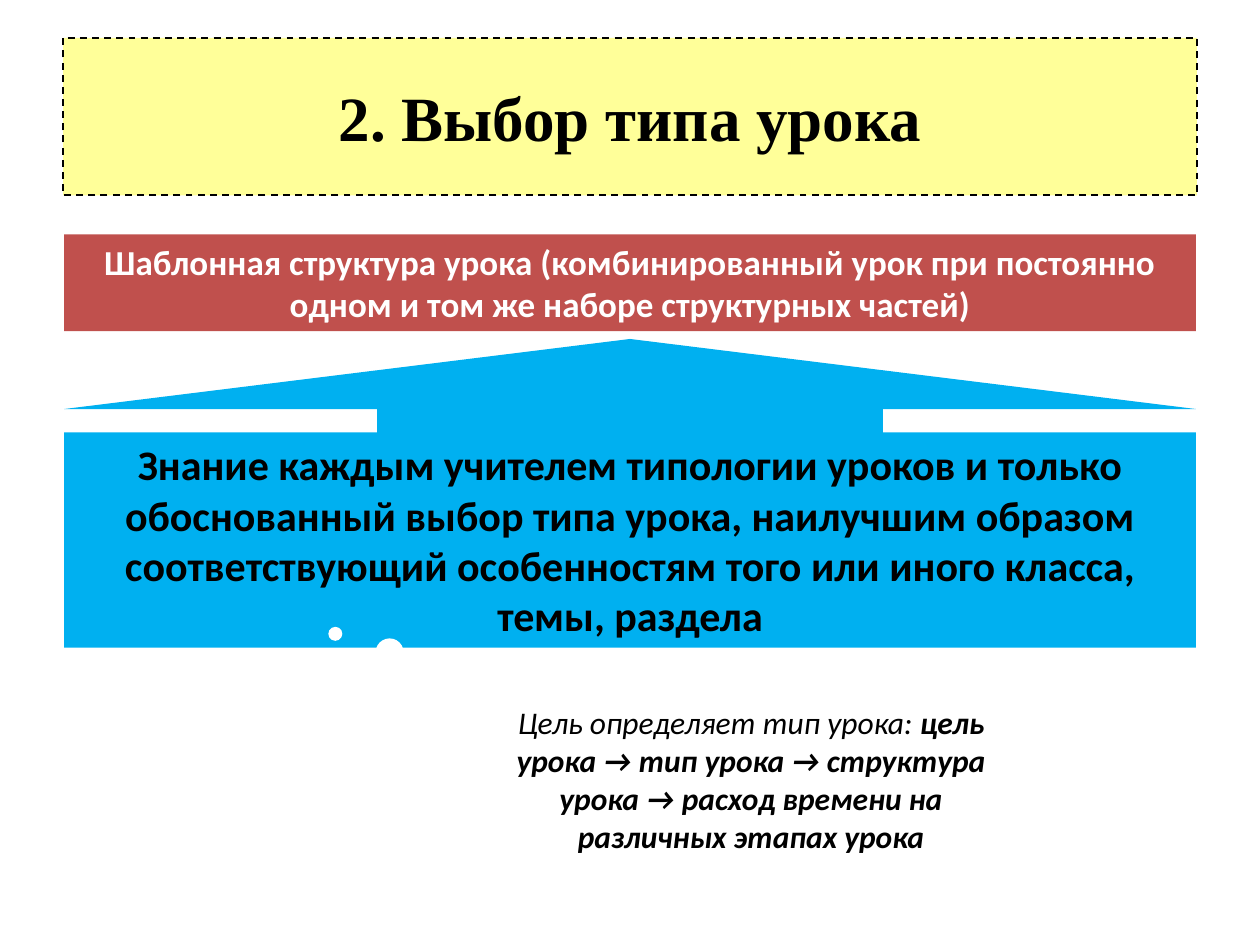
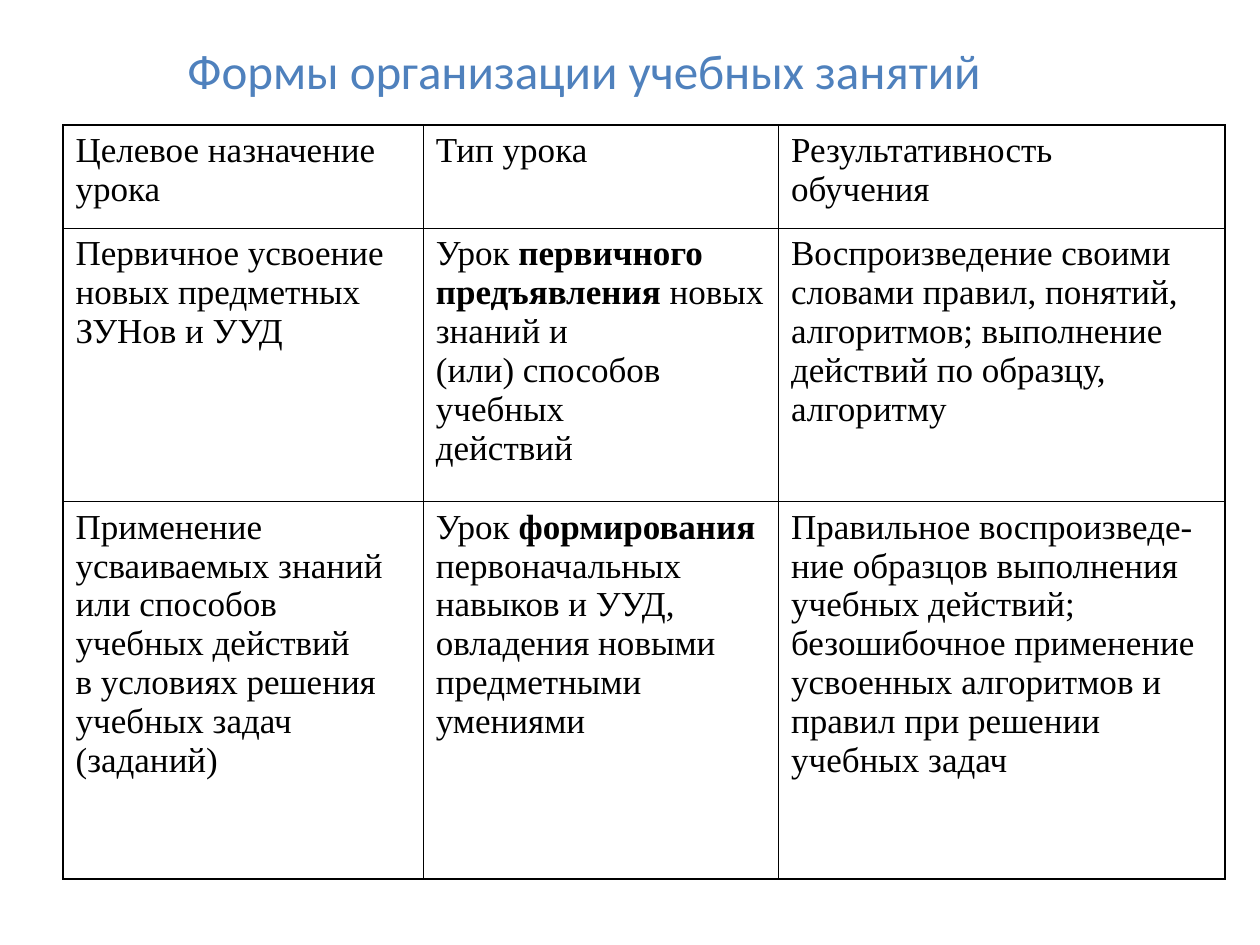
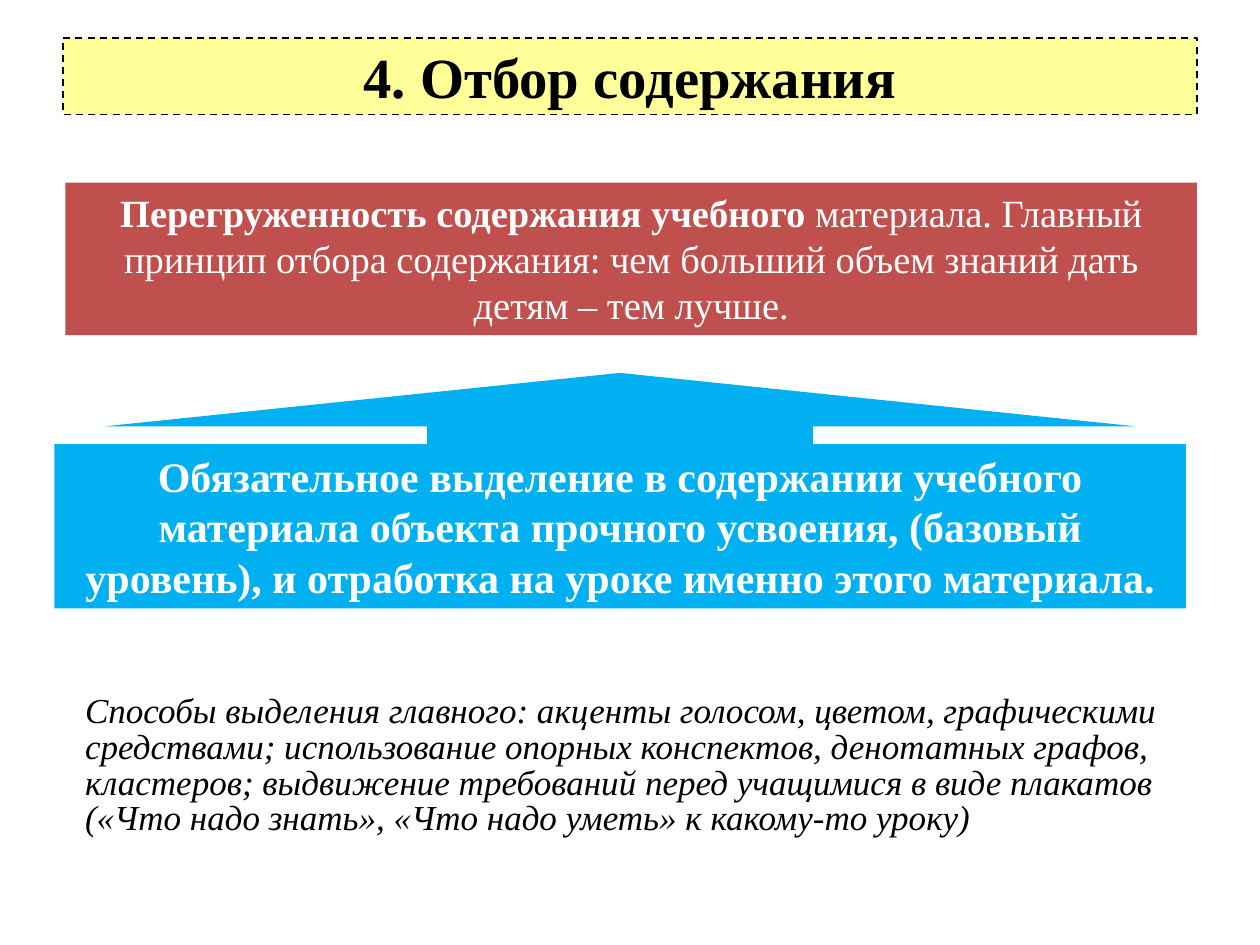
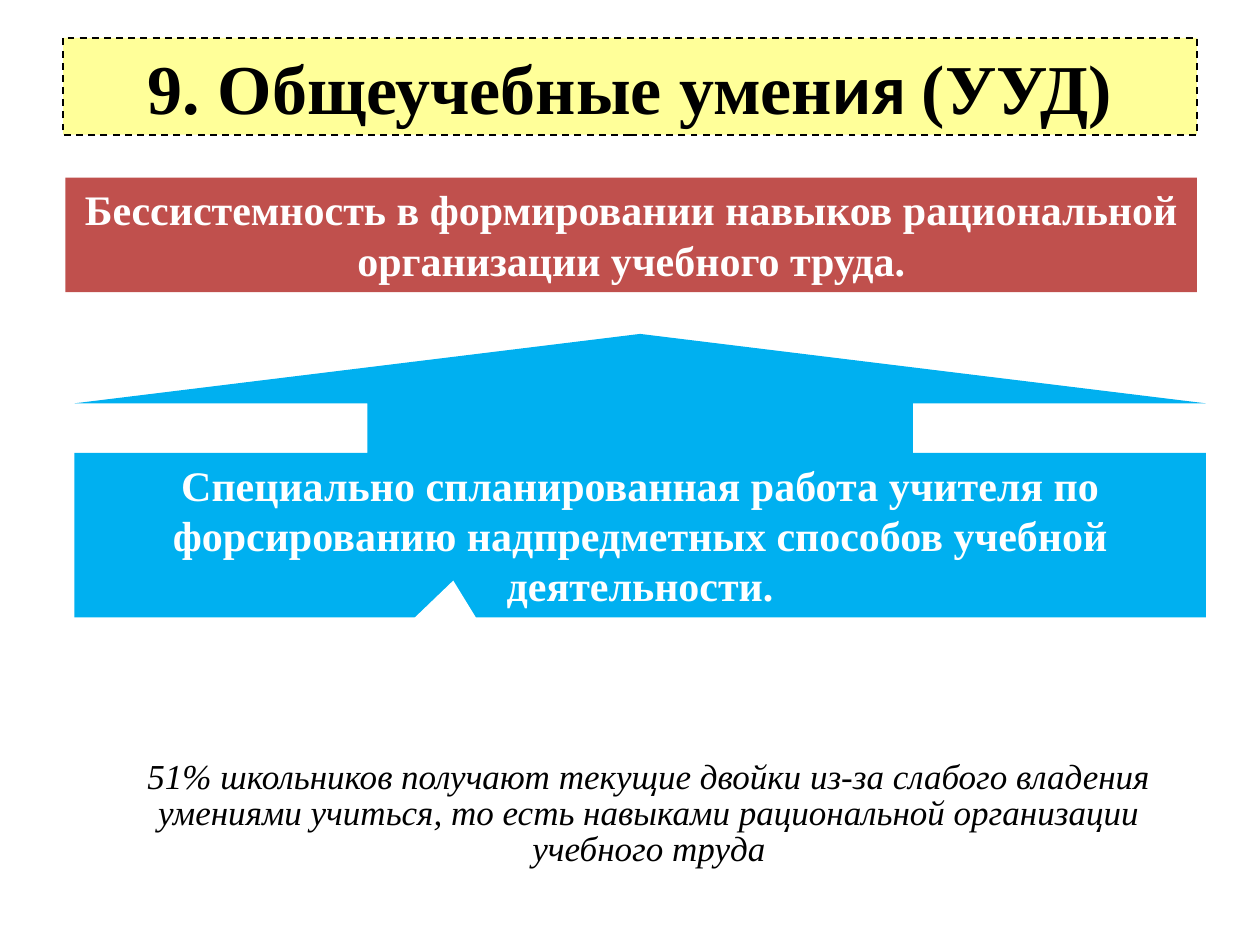
"""Build four lesson-planning slides: three problem/remedy slides and one table."""
from dataclasses import dataclass

from lxml import etree
from pptx import Presentation
from pptx.dml.color import RGBColor
from pptx.enum.dml import MSO_LINE
from pptx.enum.shapes import MSO_SHAPE
from pptx.enum.text import MSO_ANCHOR, MSO_AUTO_SIZE, PP_ALIGN
from pptx.oxml.ns import qn
from pptx.util import Pt

LEFT, CENTER = PP_ALIGN.LEFT, PP_ALIGN.CENTER
TOP, MIDDLE = MSO_ANCHOR.TOP, MSO_ANCHOR.MIDDLE
RECT, ARROW = MSO_SHAPE.RECTANGLE, MSO_SHAPE.UP_ARROW_CALLOUT
CLOUD, WEDGE = MSO_SHAPE.CLOUD_CALLOUT, MSO_SHAPE.ROUNDED_RECTANGULAR_CALLOUT
DASH, FIXED = MSO_LINE.DASH, MSO_AUTO_SIZE.NONE
TITLE_ONLY = 5


@dataclass(frozen=True)
class Theme:
    """Colours, fonts and type sizes shared by the slides."""
    black: str = "000000"
    white: str = "FFFFFF"
    title_fill: str = "FFFF99"
    problem: str = "C0504D"
    remedy: str = "00B0F0"
    accent: str = "4F81BD"
    serif: str = "Times New Roman"
    sans: str = "Calibri"
    title: float = 36
    table_title: float = 28
    large: float = 24
    body: float = 20
    note: float = 18


T = Theme()


def write(tf, paragraphs, *, size, font=T.serif, color=T.black, bold=False,
          italic=False, align=LEFT, anchor=TOP, spacing=None):
    """Fill a text frame; a run is a string or a (string, overrides) pair."""
    tf.word_wrap = True
    tf.vertical_anchor = anchor
    base = dict(size=size, font=font, color=color, bold=bold, italic=italic)
    for i, runs in enumerate(paragraphs):
        p = tf.paragraphs[0] if i == 0 else tf.add_paragraph()
        p.alignment = align
        if spacing:
            p.line_spacing = spacing
        for run in [runs] if isinstance(runs, str) else runs:
            text, changes = (run, {}) if isinstance(run, str) else run
            look = base | changes
            r = p.add_run()
            r.text = text
            r.font.name = look["font"]
            r.font.size = Pt(look["size"])
            r.font.bold = look["bold"]
            r.font.italic = look["italic"]
            r.font.color.rgb = RGBColor.from_string(look["color"])


def paint(sp, fill):
    """Give a shape a solid fill."""
    sp.fill.solid()
    sp.fill.fore_color.rgb = RGBColor.from_string(fill)


def add_title(s, box, runs, **look):
    """Place the title placeholder in its box and write it."""
    sp = s.shapes.title
    sp.left, sp.top, sp.width, sp.height = map(Pt, box)
    write(sp.text_frame, [runs], anchor=MIDDLE, **look)
    sp.text_frame.auto_size = FIXED
    return sp


def add_banner(s, height, runs, size):
    """Add the yellow dashed title banner."""
    sp = add_title(s, (36, 21.6, 648, height), runs, size=size, bold=True, align=CENTER)
    paint(sp, T.title_fill)
    sp.line.color.rgb = RGBColor.from_string(T.black)
    sp.line.width = Pt(1)
    sp.line.dash_style = DASH


def add_block(s, kind, box, fill, runs, adjustments=(), **look):
    """Add a borderless filled shape with text."""
    sp = s.shapes.add_shape(kind, *map(Pt, box))
    sp.shadow.inherit = False
    for i, value in enumerate(adjustments):
        sp.adjustments[i] = value
    paint(sp, fill)
    sp.line.fill.background()
    write(sp.text_frame, [runs], **({"align": CENTER} | look))


def problem_slide(prs, *, banner, remedy, problem, note):
    """Build a slide with a banner, a remedy arrow, a problem and a note."""
    s = prs.slides.add_slide(prs.slide_layouts[TITLE_ONLY])
    add_banner(s, **banner)
    add_block(s, ARROW, fill=T.remedy, size=T.large, bold=True, **remedy)
    add_block(s, RECT, fill=T.problem, color=T.white, bold=True, **problem)
    add_block(s, fill=T.white, italic=True, **note)


def set_borders(cell):
    """Draw a thin black line on all four sides of a cell."""
    tc_pr = cell._tc.get_or_add_tcPr()
    for i, side in enumerate(("a:lnL", "a:lnR", "a:lnT", "a:lnB")):
        ln = etree.Element(qn(side), w=str(Pt(1)))
        fill = etree.SubElement(ln, qn("a:solidFill"))
        etree.SubElement(fill, qn("a:srgbClr"), val=T.black)
        tc_pr.insert(i, ln)


def add_grid(s, box, widths, heights, rows):
    """Add a plain bordered table."""
    table = s.shapes.add_table(len(rows), len(widths), *map(Pt, box)).table
    table.first_row = table.horz_banding = False
    for column, width in zip(table.columns, widths):
        column.width = Pt(width)
    for row, height, texts in zip(table.rows, heights, rows):
        row.height = Pt(height)
        for cell, paragraphs in zip(row.cells, texts):
            cell.fill.background()
            set_borders(cell)
            write(cell.text_frame, paragraphs, size=T.body)


def table_slide(prs, title, rows):
    """Build the slide with a plain title and a table."""
    s = prs.slides.add_slide(prs.slide_layouts[TITLE_ONLY])
    sp = add_title(s, (93.6, 19.4, 510.5, 41), title,
                   size=T.table_title, font=T.sans, color=T.accent)
    sp.text_frame.margin_left = Pt(13.5)
    widths, heights = (205.9, 203, 255.2), (59.2, 156.2, 215.5)
    add_grid(s, (36, 71.3, sum(widths), sum(heights)), widths, heights, rows)


LESSON_TABLE = [
    [["Целевое назначение", "урока"], ["Тип урока"], ["Результативность", "обучения"]],
    [
        ["Первичное усвоение новых предметных ЗУНов и УУД"],
        [["Урок", (" первичного предъявления", {"bold": True}), " новых знаний и"],
         "(или) способов учебных", "действий"],
        ["Воспроизведение своими", "словами правил, понятий,", "алгоритмов; выполнение",
         "действий по образцу,", "алгоритму"],
    ],
    [
        ["Применение усваиваемых знаний или способов учебных действий",
         "в условиях решения учебных задач (заданий)"],
        [["Урок ", ("формирования", {"bold": True})],
         "первоначальных навыков и УУД, овладения новыми предметными умениями"],
        ["Правильное воспроизведе-", "ние образцов выполнения",
         "учебных действий; безошибочное применение", "усвоенных алгоритмов и",
         "правил при решении", "учебных задач"],
    ],
]


def main():
    """Build and save the deck."""
    prs = Presentation()
    prs.slide_width, prs.slide_height = Pt(720), Pt(540)
    arrow = (1.638, 2.188, 0.227, 0.697)
    problem_slide(
        prs,
        banner=dict(height=90, runs="2. Выбор типа урока", size=T.title),
        remedy=dict(
            box=(36.7, 193.7, 646.6, 176.4), adjustments=arrow, font=T.sans, color=T.black,
            runs="Знание каждым учителем типологии уроков и только обоснованный выбор "
                 "типа урока, наилучшим образом соответствующий особенностям того или "
                 "иного класса, темы, раздела"),
        problem=dict(
            box=(36.7, 133.9, 646.6, 55.4), size=T.body, font=T.sans,
            runs="Шаблонная структура урока (комбинированный урок при постоянно одном "
                 "и том же наборе структурных частей)"),
        note=dict(
            kind=CLOUD, box=(223.9, 376.6, 442.1, 144), adjustments=(-0.573, -0.6),
            size=T.note, font=T.sans,
            runs=["Цель определяет тип урока: ",
                  ("цель урока → тип урока → структура урока → расход времени на "
                   "различных этапах урока", {"bold": True})]))
    table_slide(prs, "Формы организации учебных занятий", LESSON_TABLE)
    problem_slide(
        prs,
        banner=dict(height=43.9, runs="4. Отбор содержания", size=32.4),
        remedy=dict(
            box=(31, 213.1, 646.6, 134.6), adjustments=arrow, color=T.white,
            runs="Обязательное выделение в содержании учебного материала объекта "
                 "прочного усвоения, (базовый уровень), и отработка на уроке именно "
                 "этого материала."),
        problem=dict(
            box=(37.4, 104.4, 646.6, 87.1), size=22,
            runs=["Перегруженность содержания учебного ",
                  ("материала. Главный принцип отбора содержания: чем больший объем "
                   "знаний дать детям – тем лучше.", {"bold": False})]),
        note=dict(
            kind=WEDGE, box=(36.7, 388.8, 640.8, 99.4), adjustments=(-0.302, -0.55, 0.167),
            size=T.body, align=LEFT, spacing=0.85,
            runs="Способы выделения главного: акценты голосом, цветом, графическими "
                 "средствами; использование опорных конспектов, денотатных графов, "
                 "кластеров; выдвижение требований перед учащимися в виде плакатов "
                 "(«Что надо знать», «Что надо уметь» к какому-то уроку)"))
    problem_slide(
        prs,
        banner=dict(height=55.4, size=40,
                    runs=["9. Общеучебные умен", ("ия ", {"font": T.sans}), "(УУД)"]),
        remedy=dict(
            box=(42.5, 190.8, 646.6, 162), adjustments=(1.924, 2.684, 0.245, 0.58),
            color=T.white,
            runs="Специально спланированная работа учителя по форсированию "
                 "надпредметных способов учебной деятельности."),
        problem=dict(
            box=(37.4, 101.5, 646.6, 65.5), size=T.large,
            runs="Бессистемность в формировании навыков рациональной организации "
                 "учебного труда."),
        note=dict(
            kind=WEDGE, box=(53.3, 427.7, 635, 76.3), adjustments=(-0.176, -1.757, 0.167),
            size=T.body, spacing=0.85,
            runs="51% школьников получают текущие двойки из-за слабого владения "
                 "умениями учиться, то есть навыками рациональной организации учебного "
                 "труда"))
    prs.save("out.pptx")


if __name__ == "__main__":
    main()
